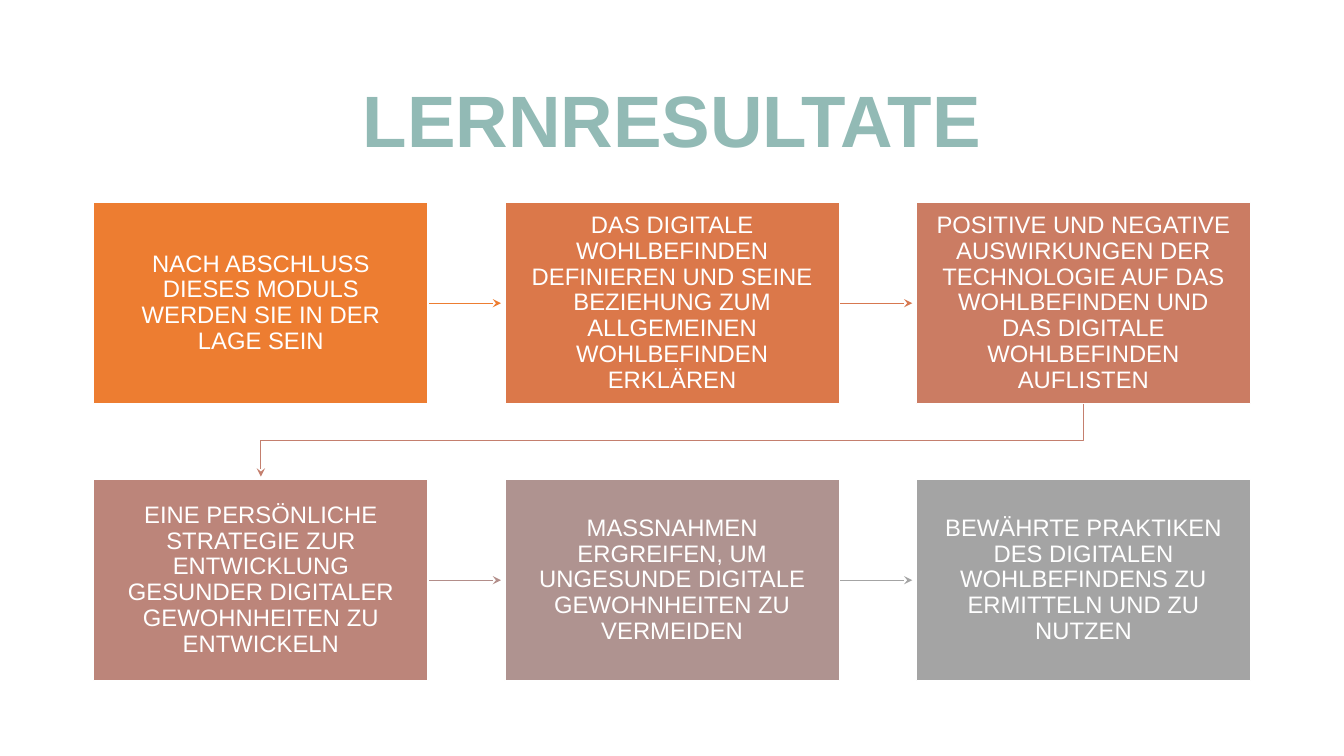
from lxml import etree
from pptx import Presentation
from pptx import util as u
from pptx.dml import color
from pptx.enum import shapes, text
from pptx.oxml import ns

FONT = "Arial"
WHITE = "FFFFFF"
WIDE, HIGH = 8.43, 5.06
STEPS = [
    ("NACH ABSCHLUSS DIESES MODULS WERDEN SIE IN DER LAGE SEIN", "ED7D31", "ED7D31"),
    ("DAS DIGITALE WOHLBEFINDEN DEFINIEREN UND SEINE BEZIEHUNG ZUM "
     "ALLGEMEINEN WOHLBEFINDEN ERKLÄREN", "DB784A", "D77850"),
    ("POSITIVE UND NEGATIVE AUSWIRKUNGEN DER TECHNOLOGIE AUF DAS WOHLBEFINDEN "
     "UND DAS DIGITALE WOHLBEFINDEN AUFLISTEN", "CB7C63", "C47F6E"),
    ("EINE PERSÖNLICHE STRATEGIE ZUR ENTWICKLUNG GESUNDER DIGITALER "
     "GEWOHNHEITEN ZU ENTWICKELN", "BC857A", "B38E8A"),
    ("MASSNAHMEN ERGREIFEN, UM UNGESUNDE DIGITALE GEWOHNHEITEN ZU VERMEIDEN",
     "AF9390", "A4A4A4"),
    ("BEWÄHRTE PRAKTIKEN DES DIGITALEN WOHLBEFINDENS ZU ERMITTELN UND ZU NUTZEN",
     "A4A4A4", None),
]


def rgb(code):
    """Turn a hex string into a colour."""
    return color.RGBColor.from_string(code)


def write(frame, words, size, shade, pad, bold=False):
    """Fill a text frame with one centred run."""
    frame.word_wrap = True
    frame.auto_size = text.MSO_AUTO_SIZE.NONE
    frame.vertical_anchor = text.MSO_ANCHOR.MIDDLE
    frame.margin_left = frame.margin_right = u.Cm(pad[0])
    frame.margin_top = frame.margin_bottom = u.Cm(pad[1])
    para = frame.paragraphs[0]
    para.alignment = text.PP_ALIGN.CENTER
    para.line_spacing = 0.9
    run = para.add_run()
    run.text = words
    run.font.name = FONT
    run.font.size = u.Pt(size)
    run.font.bold = bold
    run.font.color.rgb = rgb(shade)


def head(slide, x, y, w, h):
    """Place the title in its box."""
    title = slide.shapes.title
    title.left, title.top, title.width, title.height = map(u.Cm, (x, y, w, h))
    write(title.text_frame, "LERNRESULTATE", 52, "92BAB5", (0.25, 0.13), True)


def style(arrow, shade):
    """Colour an arrow and give it a stealth tip."""
    arrow.line.color.rgb = rgb(shade)
    arrow.line.width = u.Pt(0.75)
    props = arrow.element.spPr
    etree.SubElement(props.find(ns.qn("a:ln")), ns.qn("a:tailEnd"), type="stealth")
    if props.find(ns.qn("a:effectLst")) is None:
        etree.SubElement(props, ns.qn("a:effectLst"))


def across(slide, x, y, w, shade):
    """Draw an arrow to the next box in the row."""
    arrow = slide.shapes.add_connector(
        shapes.MSO_CONNECTOR.STRAIGHT, u.Cm(x), u.Cm(y), u.Cm(x + w), u.Cm(y))
    style(arrow, shade)


def down(slide, x, y, end, h, shade):
    """Draw a bent arrow to the start of the next row."""
    build = slide.shapes.build_freeform(u.Cm(x), u.Cm(y))
    turns = [(x, y + h / 2), (end, y + h / 2), (end, y + h)]
    build.add_line_segments([(u.Cm(a), u.Cm(b)) for a, b in turns], close=False)
    arrow = build.convert_to_shape()
    arrow.fill.background()
    style(arrow, shade)


def card(slide, x, y, words, shade):
    """Draw one step as a filled box."""
    box = slide.shapes.add_shape(
        shapes.MSO_SHAPE.RECTANGLE, u.Cm(x), u.Cm(y), u.Cm(WIDE), u.Cm(HIGH))
    box.shadow.inherit = False
    box.fill.solid()
    box.fill.fore_color.rgb = rgb(shade)
    box.line.color.rgb = rgb(WHITE)
    box.line.width = u.Pt(1)
    write(box.text_frame, words, 17, WHITE, (0.41, 0.43))


def flow(slide, x, y, w, h, cols=3):
    """Lay the steps out in rows within the box and link them."""
    over = (w - WIDE) / (cols - 1)
    drop = h - HIGH
    for i, (words, shade, link) in enumerate(STEPS):
        row, col = divmod(i, cols)
        left, top = x + col * over, y + row * drop
        if link and col < cols - 1:
            across(slide, left + WIDE, top + HIGH / 2, over - WIDE - 0.1, link)
        elif link:
            down(slide, left + WIDE / 2, top + HIGH, x + WIDE / 2,
                 drop - HIGH - 0.08, link)
        card(slide, left, top, words, shade)


def main():
    """Build and save the deck."""
    deck = Presentation()
    deck.slide_width, deck.slide_height = u.Cm(33.87), u.Cm(19.05)
    slide = deck.slides.add_slide(deck.slide_layouts[5])
    head(slide, 2.33, 1.55, 29.21, 4.72 - 1.57)
    flow(slide, 2.36, 5.11, 29.16, 12.04)
    deck.save("out.pptx")


if __name__ == "__main__":
    main()
